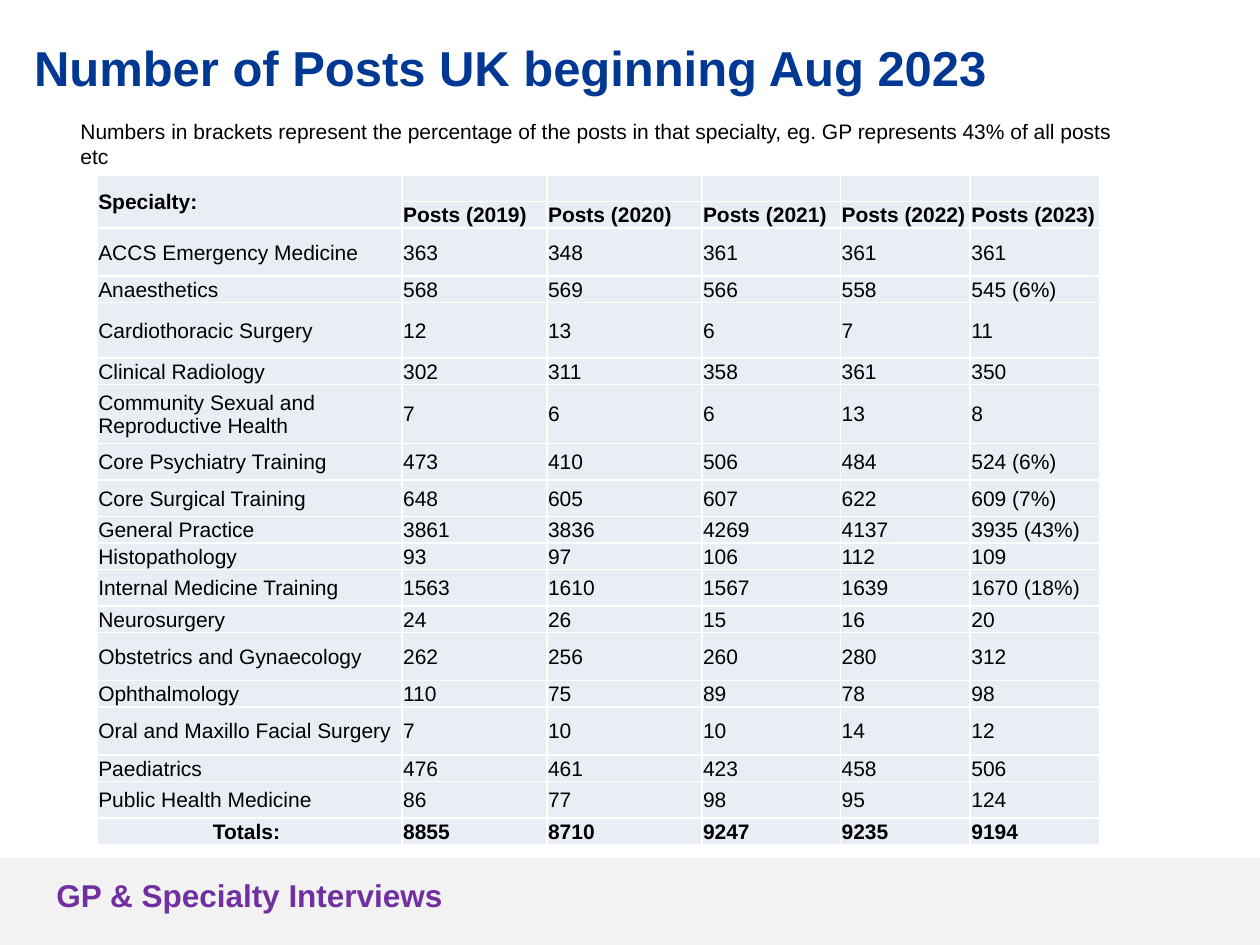
"""Build the slide listing UK specialty training posts by year."""
import lxml.etree
import pptx
import pptx.dml.color
import pptx.enum.shapes
import pptx.enum.text
import pptx.oxml
import pptx.oxml.ns
import pptx.util

Inches = pptx.util.Inches
Pt = pptx.util.Pt
RGBColor = pptx.dml.color.RGBColor
PP_ALIGN = pptx.enum.text.PP_ALIGN
MSO_ANCHOR = pptx.enum.text.MSO_ANCHOR
qn = pptx.oxml.ns.qn

BLACK = RGBColor(0x00, 0x00, 0x00)
NAVY = RGBColor(0x00, 0x38, 0x93)
PURPLE = RGBColor(0x70, 0x30, 0xA0)
BAND_GREY = RGBColor(0xF2, 0xF2, 0xF2)
CELL_BLUE = RGBColor(0xE9, 0xED, 0xF4)
BORDER_WHITE = RGBColor(0xFF, 0xFF, 0xFF)

YEARS = range(2019, 2024)
POSTS = [
    ("Specialty:", "", "", "", "", ""),
    ("", *[f"Posts ({year})" for year in YEARS]),
    ("ACCS Emergency Medicine", "363", "348", "361", "361", "361"),
    ("Anaesthetics", "568", "569", "566", "558", "545 (6%)"),
    ("Cardiothoracic Surgery", "12", "13", "6", "7", "11"),
    ("Clinical Radiology", "302", "311", "358", "361", "350"),
    ("Community Sexual and Reproductive Health", "7", "6", "6", "13", "8"),
    ("Core Psychiatry Training", "473", "410", "506", "484", "524 (6%)"),
    ("Core Surgical Training", "648", "605", "607", "622", "609 (7%)"),
    ("General Practice", "3861", "3836", "4269", "4137", "3935 (43%)"),
    ("Histopathology", "93", "97", "106", "112", "109"),
    ("Internal Medicine Training", "1563", "1610", "1567", "1639", "1670 (18%)"),
    ("Neurosurgery", "24", "26", "15", "16", "20"),
    ("Obstetrics and Gynaecology", "262", "256", "260", "280", "312"),
    ("Ophthalmology", "110", "75", "89", "78", "98"),
    ("Oral and Maxillo Facial Surgery", "7", "10", "10", "14", "12"),
    ("Paediatrics", "476", "461", "423", "458", "506"),
    ("Public Health Medicine", "86", "77", "98", "95", "124"),
    ("Totals: ", "8855", "8710", "9247", "9235", "9194"),
]
COLUMN_WIDTHS = [2.42, 1.15, 1.23, 1.1, 1.03, 1.03]
ROW_HEIGHTS = [0.2, 0.21, 0.38, 0.21, 0.44, 0.21, 0.47, 0.29, 0.29, 0.21,
               0.21, 0.29, 0.21, 0.38, 0.21, 0.38, 0.21, 0.29, 0.21]


def add_text(paragraph, text, size, color, bold=False):
    run = paragraph.add_run()
    run.text = text
    run.font.name = "Arial"
    run.font.size = Pt(size)
    run.font.bold = bold
    run.font.color.rgb = color


def add_borders(cell):
    properties = cell._tc.get_or_add_tcPr()
    for side in ("a:lnL", "a:lnR", "a:lnT", "a:lnB"):
        line = lxml.etree.SubElement(properties, qn(side), w=str(Pt(1)))
        solid = lxml.etree.SubElement(line, qn("a:solidFill"))
        lxml.etree.SubElement(solid, qn("a:srgbClr"), val=str(BORDER_WHITE))


presentation = pptx.Presentation()
presentation.slide_width = Inches(10)
presentation.slide_height = Inches(7.5)
slide = presentation.slides.add_slide(presentation.slide_layouts[5])

footer_band = slide.shapes.add_shape(
    pptx.enum.shapes.MSO_SHAPE.RECTANGLE,
    Inches(0), Inches(6.81), Inches(10), Inches(0.69))
footer_band.shadow.inherit = False
footer_band.fill.solid()
footer_band.fill.fore_color.rgb = BAND_GREY
footer_band.line.fill.background()

footer = slide.shapes.add_textbox(Inches(0.35), Inches(6.9), Inches(4.17), Inches(0.4))
footer.text_frame.word_wrap = True
add_text(footer.text_frame.paragraphs[0], "GP & Specialty Interviews", 18, PURPLE, True)

title = slide.shapes.title
title.left, title.top = Inches(-0.2), Inches(0.25)
title.width, title.height = Inches(8.5), Inches(0.99)
title.text_frame.auto_size = pptx.enum.text.MSO_AUTO_SIZE.NONE
title.text_frame.vertical_anchor = MSO_ANCHOR.TOP
title.text_frame.paragraphs[0].alignment = PP_ALIGN.CENTER
add_text(title.text_frame.paragraphs[0], "Number of Posts UK beginning Aug 2023", 28, NAVY, True)

bracket_note = slide.shapes.add_textbox(Inches(0.54), Inches(0.89), Inches(8.51), Inches(0.5))
bracket_note.text_frame.word_wrap = True
add_text(
    bracket_note.text_frame.paragraphs[0],
    "Numbers in brackets represent the percentage of the posts in that specialty, "
    "eg. GP represents 43% of all posts etc", 12, BLACK)

posts_table = slide.shapes.add_table(
    len(POSTS), len(COLUMN_WIDTHS), Inches(0.77), Inches(1.39),
    Inches(sum(COLUMN_WIDTHS)), Inches(sum(ROW_HEIGHTS))).table
posts_table.first_row = False
posts_table.horz_banding = False
for column, width in zip(posts_table.columns, COLUMN_WIDTHS):
    column.width = Inches(width)

for row_index, (row, height, entries) in enumerate(
        zip(posts_table.rows, ROW_HEIGHTS, POSTS)):
    row.height = Inches(height)
    emphasised = row_index in (0, 1, len(POSTS) - 1)
    for cell, entry in zip(row.cells, entries):
        add_borders(cell)
        cell.fill.solid()
        cell.fill.fore_color.rgb = CELL_BLUE
        cell.vertical_anchor = MSO_ANCHOR.MIDDLE
        cell.margin_left = cell.margin_right = cell.margin_top = Inches(0.01)
        cell.margin_bottom = Inches(0)
        paragraph = cell.text_frame.paragraphs[0]
        if entry:
            add_text(paragraph, entry, 12, BLACK, emphasised)
        else:
            lxml.etree.SubElement(paragraph._p, qn("a:endParaRPr"), sz="1200")

posts_table.cell(0, 0).merge(posts_table.cell(1, 0))
totals_label = posts_table.cell(len(POSTS) - 1, 0)
totals_label.text_frame.paragraphs[0].alignment = PP_ALIGN.CENTER

presentation.save("out.pptx")
